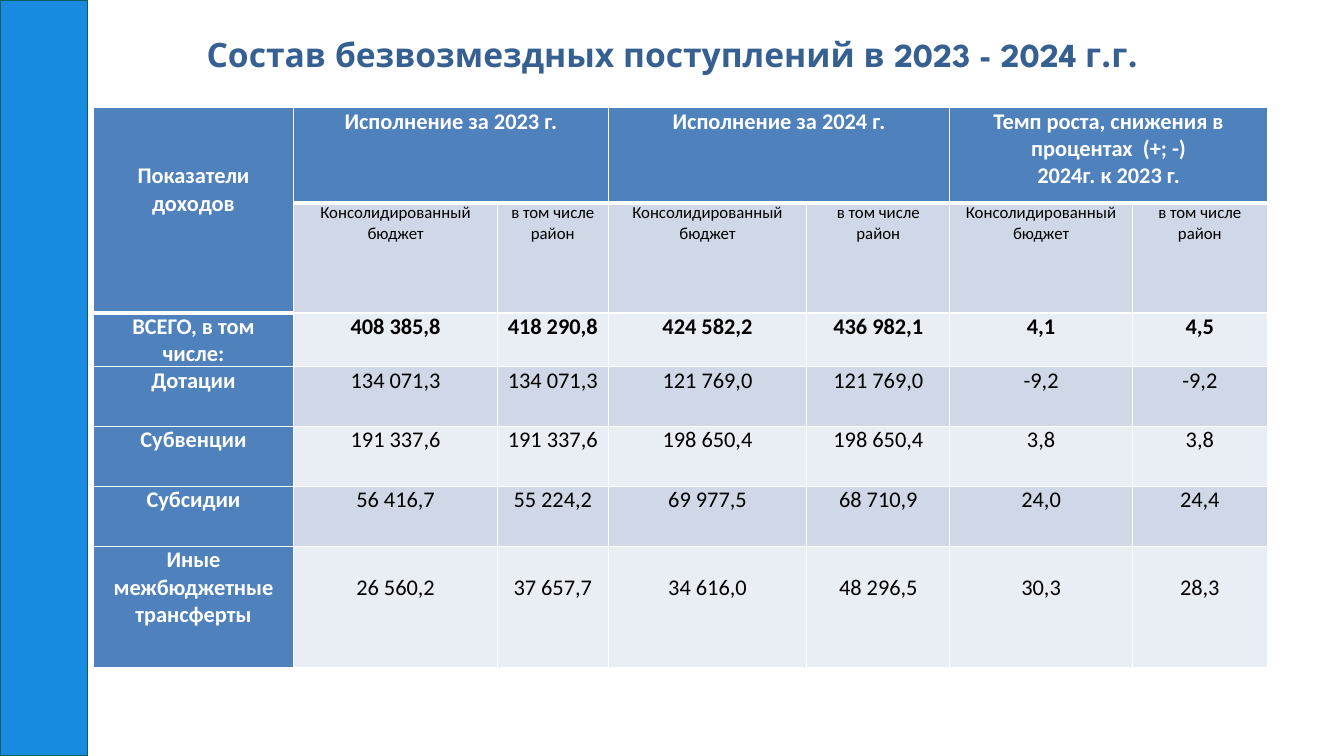
from dataclasses import dataclass

import pptx
import pptx.dml.color
import pptx.enum.shapes
import pptx.enum.text
import pptx.oxml
import pptx.oxml.ns
import pptx.util

Pt = pptx.util.Pt


@dataclass(frozen=True)
class Theme:
    sidebar: str = "188AE0"
    sidebar_line: str = "0A5F5F"
    title: str = "376092"
    header: str = "4F81BD"
    dark_band: str = "D0D8E8"
    light_band: str = "E9EDF4"
    white: str = "FFFFFF"
    black: str = "000000"
    title_font: str = "League Spartan"
    table_font: str = "Calibri"
    title_size: float = 24
    table_size: float = 16
    subheader_size: float = 12
    thin_border: float = 1
    thick_border: float = 3


THEME = Theme()

COLUMN_WIDTHS = [143.28, 145.44, 79.2, 141.84, 102.24, 130.32, 96.48]
ROW_HEIGHTS = [68, 78.5, 38.5, 42.5, 43, 43, 86.5]
LINE_HEIGHT = 19.5

GROUP_HEADERS = [
    "Исполнение за 2023 г.",
    "Исполнение за 2024 г.",
    "Темп роста, снижения в процентах  (+; -)\n2024г. к 2023 г.",
]
SUBHEADERS = ["Консолидированный бюджет", "в том числе район"]
INCOME_ROWS = [
    ["ВСЕГО, в том числе:", "408 385,8", "418 290,8", "424 582,2", "436 982,1", "4,1", "4,5"],
    ["Дотации", "134 071,3", "134 071,3", "121 769,0", "121 769,0", "-9,2", "-9,2"],
    ["Субвенции", "191 337,6", "191 337,6", "198 650,4", "198 650,4", "3,8", "3,8"],
    ["Субсидии", "56 416,7", "55 224,2", "69 977,5", "68 710,9", "24,0", "24,4"],
    ["Иные межбюджетные трансферты", "26 560,2", "37 657,7", "34 616,0", "48 296,5", "30,3", "28,3"],
]


def rgb(value):
    return pptx.dml.color.RGBColor.from_string(value)


def write_text(frame, text, *, size=THEME.table_size, color=THEME.black,
               font=THEME.table_font, bold=False):
    """Fill a text frame with centred paragraphs, one for each line."""
    frame.word_wrap = True
    for index, line in enumerate(text.split("\n")):
        paragraph = frame.paragraphs[0] if index == 0 else frame.add_paragraph()
        paragraph.alignment = pptx.enum.text.PP_ALIGN.CENTER
        run = paragraph.add_run()
        run.text = line
        run.font.size = Pt(size)
        run.font.name = font
        run.font.bold = bold
        run.font.color.rgb = rgb(color)


def add_sidebar(slide, height):
    sidebar = slide.shapes.add_shape(
        pptx.enum.shapes.MSO_SHAPE.RECTANGLE, 0, 0, Pt(62.64), height)
    sidebar.shadow.inherit = False
    sidebar.fill.solid()
    sidebar.fill.fore_color.rgb = rgb(THEME.sidebar)
    sidebar.line.color.rgb = rgb(THEME.sidebar_line)
    sidebar.line.width = Pt(1)


def add_title(slide, text):
    frame = slide.shapes.add_textbox(Pt(62.64), Pt(24.48), Pt(835.2), Pt(28.8)).text_frame
    frame.margin_left = frame.margin_right = frame.margin_top = frame.margin_bottom = 0
    write_text(frame, text, size=THEME.title_size, color=THEME.title,
               font=THEME.title_font, bold=True)


def set_borders(cell, top, bottom):
    widths = {"L": THEME.thin_border, "R": THEME.thin_border, "T": top, "B": bottom}
    properties = cell._tc.get_or_add_tcPr()
    for side, width in widths.items():
        properties.append(pptx.oxml.parse_xml(
            f'<a:ln{side} {pptx.oxml.ns.nsdecls("a")} w="{Pt(width)}">'
            f'<a:solidFill><a:srgbClr val="{THEME.white}"/></a:solidFill></a:ln{side}>'))


def style_cell(cell, row, column):
    """Set margins, borders and fill by the cell's place in the table."""
    cell.margin_left = cell.margin_right = Pt(5)
    cell.margin_top = cell.margin_bottom = 0
    header_end = 1 if column == 0 else 0
    set_borders(
        cell,
        top=THEME.thick_border if row == header_end + 1 else THEME.thin_border,
        bottom=THEME.thick_border if row == header_end else THEME.thin_border)
    band = THEME.dark_band if row % 2 else THEME.light_band
    cell.fill.solid()
    cell.fill.fore_color.rgb = rgb(THEME.header if row == 0 or column == 0 else band)


def write_headers(table):
    corner = table.cell(0, 0)
    corner.merge(table.cell(1, 0))
    corner.margin_top = Pt(2 * LINE_HEIGHT)
    write_text(corner.text_frame, "Показатели доходов", color=THEME.white, bold=True)
    for group, header in enumerate(GROUP_HEADERS):
        first = 1 + group * len(SUBHEADERS)
        cell = table.cell(0, first)
        cell.merge(table.cell(0, first + 1))
        write_text(cell.text_frame, header, color=THEME.white, bold=True)
        for offset, subheader in enumerate(SUBHEADERS):
            write_text(table.cell(1, first + offset).text_frame, subheader,
                       size=THEME.subheader_size)


def write_income(table):
    last_row = len(ROW_HEIGHTS) - 1
    for row, values in enumerate(INCOME_ROWS, start=2):
        for column, value in enumerate(values):
            cell = table.cell(row, column)
            is_label = column == 0
            if row == last_row and not is_label:
                cell.margin_top = Pt(LINE_HEIGHT)
            write_text(cell.text_frame, value, bold=is_label or row == 2,
                       color=THEME.white if is_label else THEME.black)


def add_income_table(slide):
    table = slide.shapes.add_table(
        len(ROW_HEIGHTS), len(COLUMN_WIDTHS), Pt(66.6), Pt(77.04),
        Pt(sum(COLUMN_WIDTHS)), Pt(sum(ROW_HEIGHTS))).table
    for column, width in zip(table.columns, COLUMN_WIDTHS):
        column.width = Pt(width)
    for row, height in zip(table.rows, ROW_HEIGHTS):
        row.height = Pt(height)
    for row in range(len(ROW_HEIGHTS)):
        for column in range(len(COLUMN_WIDTHS)):
            style_cell(table.cell(row, column), row, column)
    write_headers(table)
    write_income(table)


def main():
    presentation = pptx.Presentation()
    presentation.slide_width = Pt(960)
    presentation.slide_height = Pt(540)
    slide = presentation.slides.add_slide(presentation.slide_layouts[6])
    add_sidebar(slide, presentation.slide_height)
    add_title(slide, "Состав безвозмездных поступлений в 2023 - 2024 г.г.")
    add_income_table(slide)
    presentation.save("out.pptx")


if __name__ == "__main__":
    main()
